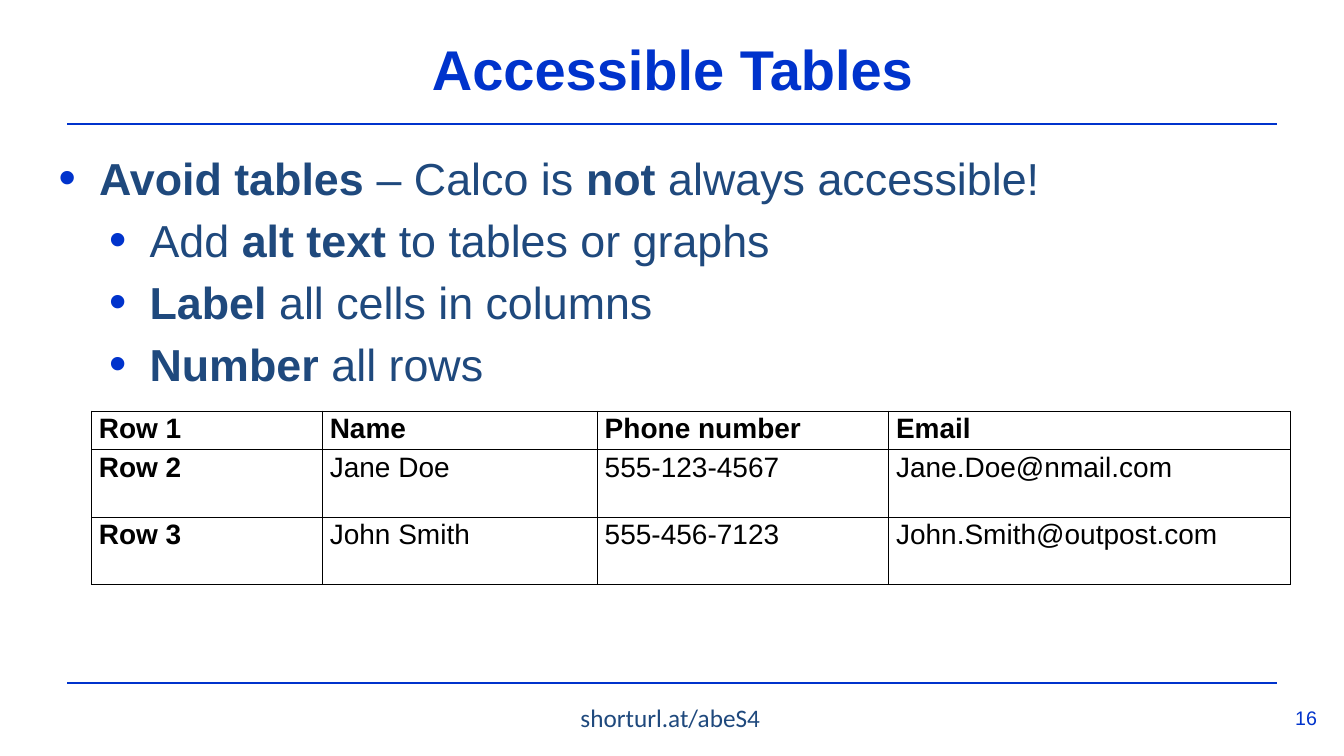
from lxml.etree import SubElement
from pptx import Presentation
from pptx.dml.color import RGBColor
from pptx.enum.shapes import MSO_CONNECTOR
from pptx.enum.text import MSO_ANCHOR, PP_ALIGN
from pptx.oxml.ns import qn
from pptx.util import Cm, Pt

COLORS = {"blue": "0033CC", "navy": "1F497D", "black": "000000"}
BULLETS = [
    (0, [("Avoid tables ", True), ("– Calco is ", False), ("not", True), (" always accessible!", False)]),
    (1, [("Add ", False), ("alt text ", True), ("to tables or graphs", False)]),
    (1, [("Label", True), (" all cells in columns", False)]),
    (1, [("Number", True), (" all rows", False)]),
]
CONTACTS = [
    ["Row 1", "Name", "Phone number", "Email"],
    ["Row 2", "Jane Doe", "555-123-4567", "Jane.Doe@nmail.com"],
    ["Row 3", "John Smith", "555-456-7123", "John.Smith@outpost.com"],
]


class SlideBuilder:
    def __init__(self, presentation):
        self.slide = presentation.slides.add_slide(presentation.slide_layouts[5])
        self.font_name = "Arial"

    def apply(self, target, values):
        for name, value in values.items():
            setattr(target, name, value)

    def style_font(self, font, size, color, bold=False, name=None):
        self.apply(font, {"name": name or self.font_name, "size": Pt(size), "bold": bold})
        font.color.rgb = RGBColor.from_string(COLORS[color])

    def frame(self, shape, margins):
        sides = ("margin_left", "margin_top", "margin_right", "margin_bottom")
        self.apply(shape.text_frame, dict(zip(sides, map(Cm, margins))))
        self.apply(shape.text_frame, {"word_wrap": True, "vertical_anchor": MSO_ANCHOR.TOP})
        return shape.text_frame

    def title(self, text, left, top, width, height):
        shape = self.slide.shapes.title
        self.apply(shape, {"left": Cm(left), "top": Cm(top), "width": Cm(width), "height": Cm(height)})
        paragraph = self.frame(shape, (0, 0.03, 0, 0)).paragraphs[0]
        paragraph.text = text
        paragraph.alignment = PP_ALIGN.CENTER
        self.style_font(paragraph.runs[0].font, 40, "blue", True)

    def text(self, text, box, size, color, margins, name=None):
        shape = self.slide.shapes.add_textbox(*map(Cm, box))
        paragraph = self.frame(shape, margins).paragraphs[0]
        paragraph.text = text
        self.style_font(paragraph.runs[0].font, size, color, name=name)

    def rule(self, left, top, width):
        connector = self.slide.shapes.add_connector(
            MSO_CONNECTOR.STRAIGHT, Cm(left), Cm(top), Cm(left + width), Cm(top)
        )
        connector.line.width = Pt(1.56)
        connector.line.color.rgb = RGBColor.from_string(COLORS["blue"])
        SubElement(connector._element.spPr, qn("a:effectLst"))

    def bullets(self, items, left, top, width, height):
        shape = self.slide.shapes.add_textbox(Cm(left), Cm(top), Cm(width), Cm(height))
        text_frame = self.frame(shape, (0, 0.18, 0, 0))
        for index, (level, runs) in enumerate(items):
            paragraph = text_frame.add_paragraph() if index else text_frame.paragraphs[0]
            self.apply(paragraph, {"level": level, "space_before": Pt(6 if index else 0)})
            properties = paragraph._p.get_or_add_pPr()
            properties.set("marL", str(Cm(1.03 + 1.27 * level)))
            properties.set("indent", str(Cm(-1.02)))
            color = SubElement(properties, qn("a:buClr"))
            SubElement(color, qn("a:srgbClr"), val=COLORS["blue"])
            SubElement(properties, qn("a:buSzPct"), val="110000")
            SubElement(properties, qn("a:buFont"), typeface=self.font_name)
            SubElement(properties, qn("a:buChar"), char="•")
            for text, bold in runs:
                run = paragraph.add_run()
                run.text = text
                self.style_font(run.font, 32, "navy", bold)

    def border(self, cell):
        properties = cell._tc.get_or_add_tcPr()
        for index, side in enumerate(("lnL", "lnR", "lnT", "lnB")):
            line = properties.makeelement(qn(f"a:{side}"), {"w": str(Pt(1))})
            fill = SubElement(line, qn("a:solidFill"))
            SubElement(fill, qn("a:srgbClr"), val=COLORS["black"])
            properties.insert(index, line)

    def table(self, rows, left, top, widths, heights):
        shape = self.slide.shapes.add_table(
            len(rows), len(widths), Cm(left), Cm(top), Cm(sum(widths)), Cm(sum(heights))
        )
        table = shape.table
        self.apply(table, {"first_row": True, "horz_banding": False})
        for column, width in zip(table.columns, widths):
            column.width = Cm(width)
        for row_index, values in enumerate(rows):
            table.rows[row_index].height = Cm(heights[row_index])
            for column_index, value in enumerate(values):
                cell = table.cell(row_index, column_index)
                self.apply(cell, {
                    "text": value, "margin_left": Cm(0.18), "margin_right": Cm(0.18),
                    "margin_top": 0, "margin_bottom": 0,
                })
                cell.fill.background()
                self.border(cell)
                paragraph = cell.text_frame.paragraphs[0]
                paragraph.line_spacing = 1.07
                heading = row_index == 0 or column_index == 0
                self.style_font(paragraph.runs[0].font, 20, "black", heading)


def main():
    presentation = Presentation()
    presentation.slide_width = Cm(33.87)
    presentation.slide_height = Cm(19.05)
    builder = SlideBuilder(presentation)
    for top in (3.12, 17.22):
        builder.rule(1.7, top, 30.48)
    builder.title("Accessible Tables", 0.08, 0.84, 33.73, 1.75)
    builder.bullets(BULLETS, 1.47, 3.61, 31.85, 6.3)
    builder.table(CONTACTS, 2.31, 10.36, (5.82, 6.93, 7.34, 10.13), (0.97, 1.7, 1.7))
    builder.text("shorturl.at/abeS4", (14.38, 17.58, 5.11, 1.02), 18, "navy", (0.25, 0.13, 0.25, 0.13), "Calibri")
    builder.text("16", (32.54, 17.78, 0.79, 0.64), 14, "blue", (0.1, 0, 0, 0))
    presentation.save("out.pptx")


if __name__ == "__main__":
    main()
